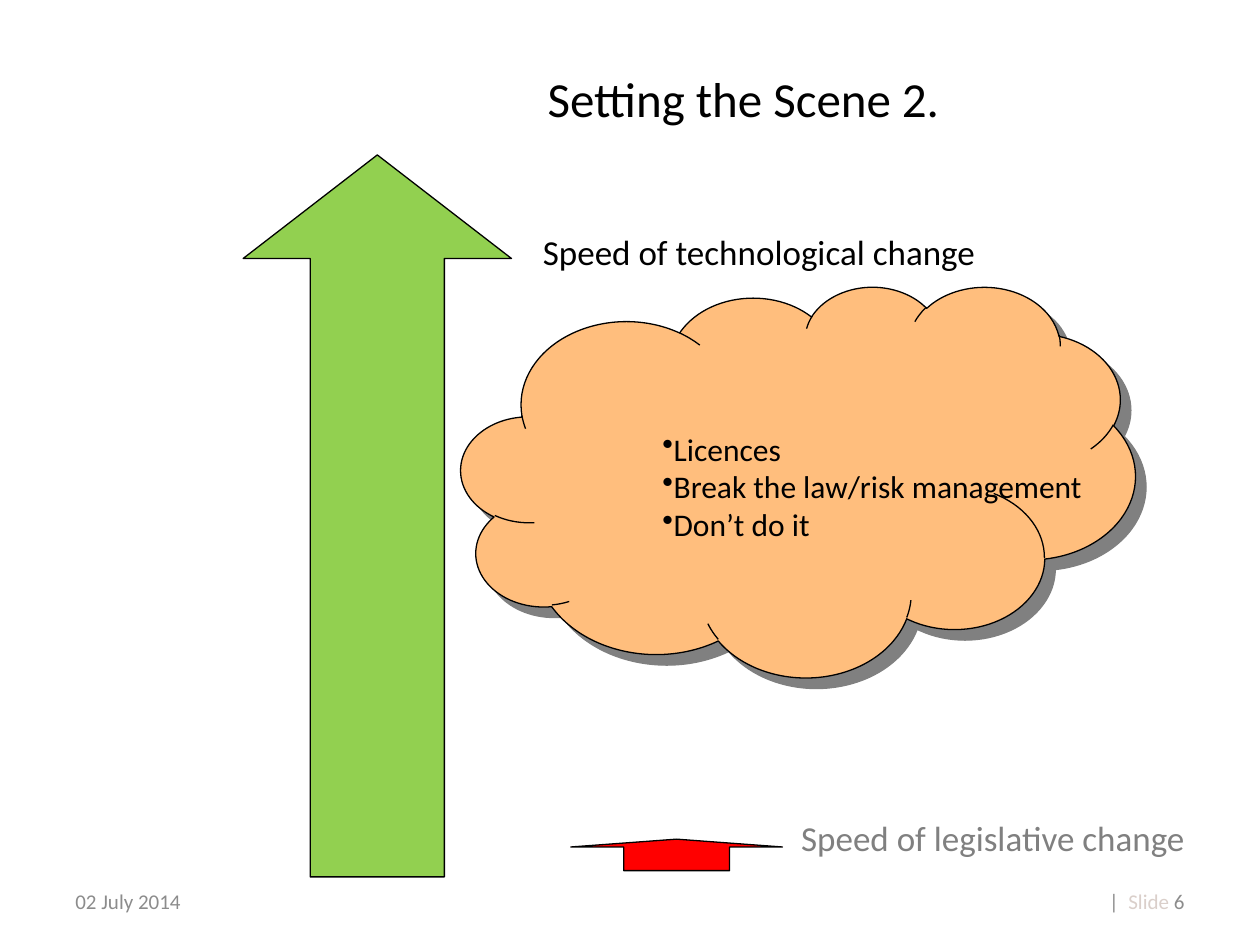
from lxml import etree
from pptx import Presentation
from pptx.dml.color import RGBColor
from pptx.enum.shapes import MSO_SHAPE
from pptx.enum.text import MSO_ANCHOR, PP_ALIGN
from pptx.oxml.ns import qn
from pptx.util import Inches, Pt

UP_ARROW, CLOUD = MSO_SHAPE.UP_ARROW, MSO_SHAPE.CLOUD
LEFT, CENTER, RIGHT = PP_ALIGN.LEFT, PP_ALIGN.CENTER, PP_ALIGN.RIGHT
TOP, MIDDLE = MSO_ANCHOR.TOP, MSO_ANCHOR.MIDDLE

FONT = "Calibri"
COLORS = {
    "text": "000000", "muted": "808080", "footer": "8C8C8C", "faint": "DACFCA",
    "fast": "92D050", "slow": "FF0000", "cloud": "FFBE7D", "shadow": "808080",
}


def rgb(name):
    return RGBColor.from_string(COLORS[name])


def write(tf, paragraphs, size=20, color="text", align=LEFT, anchor=TOP,
          wrap=True, bullet=None):
    """Fill a text frame; a paragraph is a string or a list of (text, color) runs."""
    tf.word_wrap = wrap
    tf.vertical_anchor = anchor
    for i, runs in enumerate(paragraphs):
        p = tf.paragraphs[0] if i == 0 else tf.add_paragraph()
        p.alignment = align
        if bullet:
            etree.SubElement(p._p.get_or_add_pPr(), qn("a:buChar"), char=bullet)
        for text, run_color in [(runs, color)] if isinstance(runs, str) else runs:
            r = p.add_run()
            r.text = text
            r.font.name = FONT
            r.font.size = Pt(size)
            r.font.color.rgb = rgb(run_color)


class SlideBuilder:
    def __init__(self, prs):
        self.s = prs.slides.add_slide(prs.slide_layouts[5])

    def title(self, text, x, y, w, h):
        sp = self.s.shapes.title
        sp.left, sp.top, sp.width, sp.height = map(Inches, (x, y, w, h))
        write(sp.text_frame, [text], size=28, align=CENTER, anchor=MIDDLE)

    def text(self, paragraphs, x, y, w, h, **fmt):
        sp = self.s.shapes.add_textbox(*map(Inches, (x, y, w, h)))
        write(sp.text_frame, paragraphs, **fmt)

    def shape(self, kind, x, y, w, h, fill):
        sp = self.s.shapes.add_shape(kind, *map(Inches, (x, y, w, h)))
        sp.shadow.inherit = False
        sp.fill.solid()
        sp.fill.fore_color.rgb = rgb(fill)
        sp.line.color.rgb = rgb("text")
        sp.line.width = Pt(0.75)
        return sp

    def arrow(self, x, y, w, h, fill, head):
        sp = self.shape(UP_ARROW, x, y, w, h, fill)
        sp.adjustments[0] = 0.5
        sp.adjustments[1] = head

    def cloud(self, x, y, w, h):
        sp = self.shape(CLOUD, x, y, w, h, "cloud")
        effects = sp._element.spPr.find(qn("a:effectLst"))
        shadow = etree.SubElement(effects, qn("a:outerShdw"), dist=str(Pt(8.5)),
                                  dir=str(45 * 60000), algn="ctr", rotWithShape="0")
        etree.SubElement(shadow, qn("a:srgbClr"), val=COLORS["shadow"])


def main():
    prs = Presentation()
    prs.slide_width, prs.slide_height = Inches(10), Inches(7.5)
    b = SlideBuilder(prs)

    b.title("Setting the Scene 2.", 2.08, 0, 7.64, 1.55)
    footer = dict(size=12, color="footer", anchor=MIDDLE)
    b.text(["02 July 2014"], 0.5, 6.95, 2.33, 0.4, **footer)
    b.text([[("|", "footer"), ("  Slide ", "faint"), ("6", "footer")]],
           7.17, 6.95, 2.33, 0.4, align=RIGHT, **footer)

    b.arrow(1.93, 1.23, 2.13, 5.73, "fast", head=0.386)
    b.arrow(4.53, 6.66, 1.68, 0.25, "slow", head=0.25)
    b.text(["Speed of technological change"], 4.21, 1.78, 5.12, 0.44)
    b.text(["Speed of legislative change"], 6.26, 6.43, 3.63, 0.44,
           color="muted", wrap=False)

    b.cloud(3.66, 2.27, 5.35, 3.1)
    b.text(["Licences", "Break the law/risk management", "Don’t do it"],
           5.16, 3.36, 3.86, 1.01, size=18, bullet="•")

    prs.save("out.pptx")


if __name__ == "__main__":
    main()
